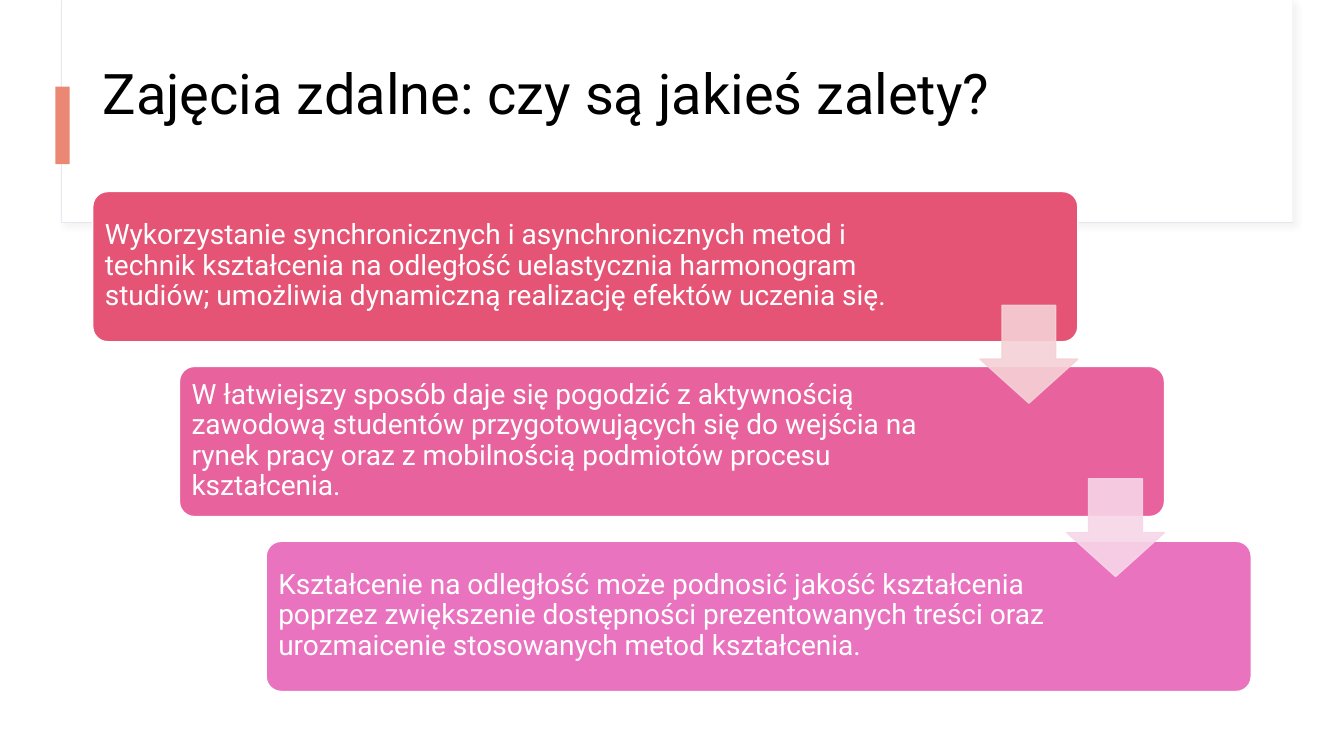
from lxml import etree
from pptx import Presentation
from pptx.dml.color import RGBColor
from pptx.enum import shapes, text
from pptx.oxml import ns
from pptx.util import Inches, Pt

HUES = {
    "white": "FFFFFF", "black": "000000", "frame": "EBE5F0",
    "shade": "D9D9D9", "accent": "EA8873",
    "red": "E55375", "pink": "E8639D", "orchid": "EA73C0",
    "blush": "F5D1D6", "rose": "F7D6E8",
}
KIND = shapes.MSO_SHAPE

deck = Presentation()
deck.slide_width, deck.slide_height = Inches(13.33), Inches(7.5)
slide = deck.slides.add_slide(deck.slide_layouts[6])


def draw(kind, box, fill, line=None, width=1, adjust=(), alpha=None):
    shape = slide.shapes.add_shape(kind, *map(Inches, box))
    shape.shadow.inherit = False
    for i, value in enumerate(adjust):
        shape.adjustments[i] = value
    shape.fill.solid()
    shape.fill.fore_color.rgb = RGBColor.from_string(HUES[fill])
    if line:
        shape.line.color.rgb = RGBColor.from_string(HUES[line])
        shape.line.width = Pt(width)
    else:
        shape.line.fill.background()
    if alpha:
        for hue in shape._element.spPr.iter(ns.qn("a:srgbClr")):
            etree.SubElement(hue, ns.qn("a:alpha"), val=str(alpha * 1000))
    return shape


def write(box, words, size, hue, pads):
    frame = slide.shapes.add_textbox(*map(Inches, box)).text_frame
    form = {"word_wrap": True, "vertical_anchor": text.MSO_ANCHOR.MIDDLE}
    for side, pad in zip(("left", "right", "top", "bottom"), pads):
        form["margin_" + side] = Inches(pad)
    for name, value in form.items():
        setattr(frame, name, value)
    para = frame.paragraphs[0]
    para.line_spacing = 0.9
    run = para.add_run()
    run.text = words
    for name, value in {"name": "Roboto", "size": Pt(size)}.items():
        setattr(run.font, name, value)
    run.font.color.rgb = RGBColor.from_string(HUES[hue])


# Title panel with a soft shadow, and its accent bar
panel = draw(KIND.RECTANGLE, (0.61, 0, 12.21, 2.21), "white", "frame", 0.75)
glow = etree.SubElement(
    panel._element.spPr.find(ns.qn("a:effectLst")), ns.qn("a:outerShdw"),
    blurRad=str(Pt(4)), dist=str(Pt(3)), dir=str(45 * 60000),
    algn="tl", rotWithShape="0")
tint = etree.SubElement(glow, ns.qn("a:srgbClr"), val=HUES["shade"])
etree.SubElement(tint, ns.qn("a:alpha"), val="30000")
draw(KIND.RECTANGLE, (0.62, 0, 12.2, 2.2), "white")
draw(KIND.RECTANGLE, (0.55, 0.86, 0.14, 0.77), "accent")
write((0.92, 0.37, 11.49, 1.18), "Zajęcia zdalne: czy są jakieś zalety?",
      40, "black", (0.1, 0.1, 0.05, 0.05))

# Staggered cards
LEFT, TOP, WIDE, HIGH = 0.92, 1.9, 9.77, 1.49
STEP, DROP = 0.86, 1.735
cards = [
    ("red", 8.16, "Wykorzystanie synchronicznych i asynchronicznych metod i "
     "technik kształcenia na odległość uelastycznia harmonogram studiów; "
     "umożliwia dynamiczną realizację efektów uczenia się."),
    ("pink", 7.85, "W łatwiejszy sposób daje się pogodzić z aktywnością "
     "zawodową studentów przygotowujących się do wejścia na rynek pracy "
     "oraz z mobilnością podmiotów procesu kształcenia."),
    ("orchid", 7.85, "Kształcenie na odległość może podnosić jakość "
     "kształcenia poprzez zwiększenie dostępności prezentowanych treści "
     "oraz urozmaicenie stosowanych metod kształcenia."),
]
for i, (hue, span, words) in enumerate(cards):
    x, y = LEFT + i * STEP, TOP + i * DROP
    draw(KIND.ROUNDED_RECTANGLE, (x, y, WIDE, HIGH), hue, "white",
         adjust=(0.1,))
    write((x + 0.04, y + 0.04, span, 1.4), words, 20, "white", (0.08,) * 4)

# Arrows leading from card to card
SIDE = 0.97
for i, hue in enumerate(("blush", "rose")):
    box = (LEFT + WIDE - SIDE + i * STEP, 3.03 + i * 1.72, SIDE, SIDE)
    draw(KIND.DOWN_ARROW, box, hue, hue, adjust=(0.55, 0.45), alpha=90)

deck.save("out.pptx")
